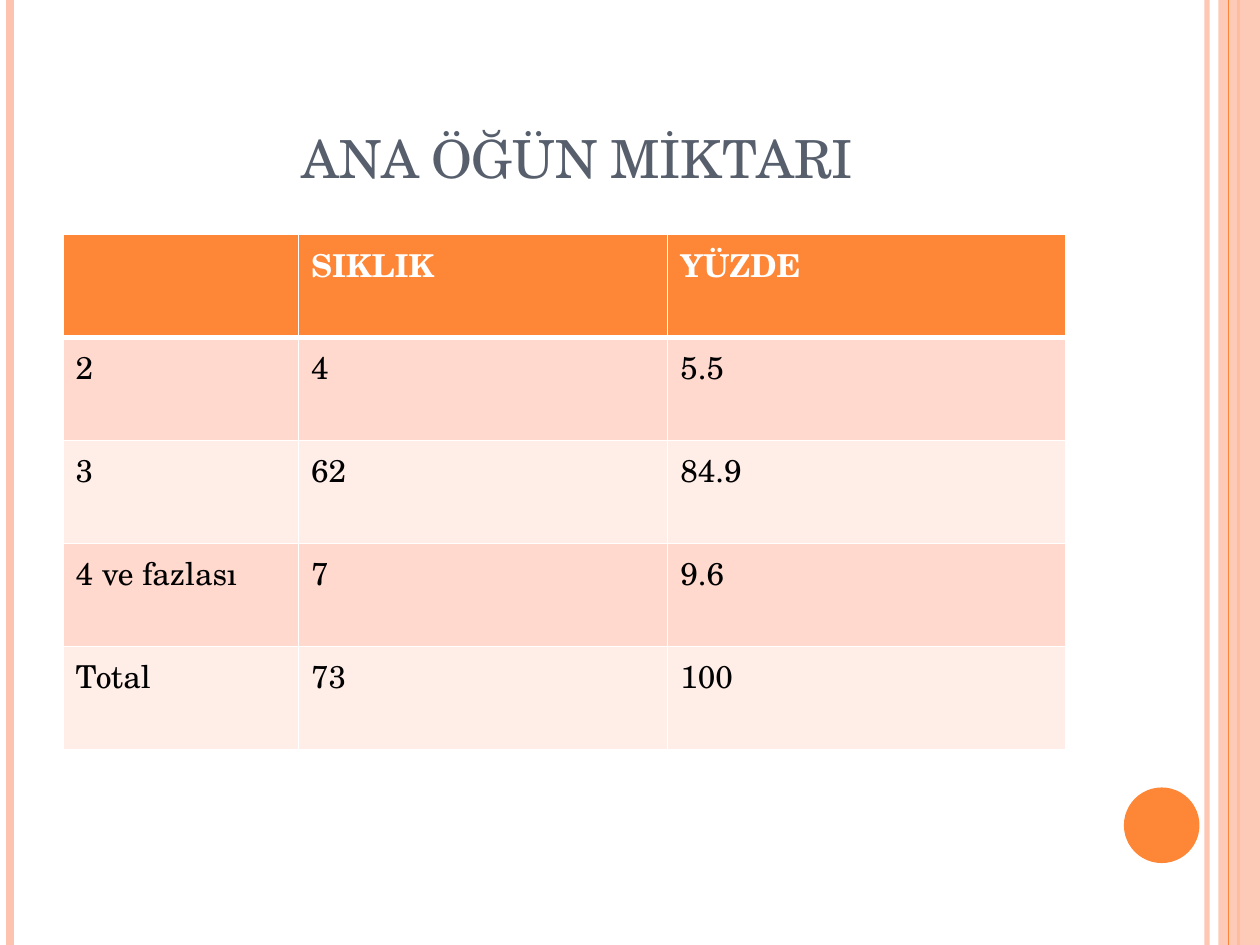
from lxml.etree import SubElement
from pptx import Presentation
from pptx.dml.color import RGBColor
from pptx.enum.shapes import MSO_CONNECTOR, MSO_SHAPE
from pptx.enum.text import MSO_ANCHOR, PP_ALIGN
from pptx.oxml.ns import qn
from pptx.util import Inches, Pt

FONT = "TeX Gyre Schola"
ORANGE = RGBColor(0xFE, 0x86, 0x37)
PEACH = RGBColor(0xFE, 0xC3, 0xAE)
BAND_DARK = RGBColor(0xFF, 0xD9, 0xCE)
BAND_LIGHT = RGBColor(0xFF, 0xED, 0xE8)
SLATE = RGBColor(0x57, 0x5F, 0x6D)
WHITE = RGBColor(0xFF, 0xFF, 0xFF)
BLACK = RGBColor(0x00, 0x00, 0x00)

WIDTH, HEIGHT = Inches(10), Inches(7.5)
MEALS = [
    ["", "SIKLIK", "YÜZDE"],
    ["2", "4", "5.5"],
    ["3", "62", "84.9"],
    ["4 ve fazlası", "7", "9.6"],
    ["Total", "73", "100"],
]
COLUMN_INCHES = [1.87, 2.93, 3.16]


def write_text(frame, text, size, color, bold=False, align=PP_ALIGN.LEFT, small_caps=False):
    paragraph = frame.paragraphs[0]
    paragraph.alignment = align
    run = paragraph.add_run()
    run.text = text
    run.font.name = FONT
    run.font.size = Pt(size)
    run.font.bold = bold
    run.font.color.rgb = color
    if small_caps:
        run.font._element.set("cap", "small")


def set_opacity(properties, percent):
    color = next(properties.iter(qn("a:srgbClr")))
    SubElement(color, qn("a:alpha"), val=str(percent * 1000))


def add_stripe(slide, x, top, height, color, weight, opacity=100):
    stripe = slide.shapes.add_connector(MSO_CONNECTOR.STRAIGHT, x, top, x, top + height)
    stripe.line.color.rgb = color
    stripe.line.width = Pt(weight)
    properties = stripe._element.spPr
    if opacity < 100:
        set_opacity(properties, opacity)
    SubElement(properties, qn("a:effectLst"))


def add_solid(slide, preset, box, color, opacity=100):
    solid = slide.shapes.add_shape(preset, *box)
    solid.shadow.inherit = False
    solid.fill.solid()
    solid.fill.fore_color.rgb = color
    solid.line.fill.background()
    if opacity < 100:
        set_opacity(solid._element.spPr, opacity)


def add_frame(slide, box):
    left, top, width, height = box
    add_stripe(slide, left + int(width * 0.958), top, height, PEACH, 3, opacity=93)
    add_stripe(slide, left + int(width * 0.008), top, height, PEACH, 4.5)
    add_stripe(slide, left + int(width * 0.983), top, height, ORANGE, 1.5)
    side_band = (left + int(width * 0.967), top, int(width * 0.033), height)
    add_solid(slide, MSO_SHAPE.RECTANGLE, side_band, PEACH, opacity=87)
    add_stripe(slide, left + int(width * 0.975), top, height, ORANGE, 0.75)
    diameter = int(width * 0.06)
    disc = (left + int(width * 0.892), top + int(height * 5 / 6), diameter, diameter)
    add_solid(slide, MSO_SHAPE.OVAL, disc, ORANGE)


def add_title(slide, box, text):
    title = slide.shapes.title
    title.left, title.top, title.width, title.height = box
    title.text_frame.vertical_anchor = MSO_ANCHOR.BOTTOM
    write_text(title.text_frame, text, 30, SLATE, align=PP_ALIGN.CENTER, small_caps=True)


def set_borders(cell, top=1, bottom=1):
    properties = cell._tc.get_or_add_tcPr()
    for side, weight in (("L", 1), ("R", 1), ("T", top), ("B", bottom)):
        line = SubElement(properties, qn(f"a:ln{side}"), w=str(Pt(weight)))
        fill = SubElement(line, qn("a:solidFill"))
        SubElement(fill, qn("a:srgbClr"), val=str(WHITE))


def add_meal_table(slide, box, rows):
    table = slide.shapes.add_table(len(rows), len(rows[0]), *box).table
    for column, inches in zip(table.columns, COLUMN_INCHES):
        column.width = Inches(inches)
    for r, values in enumerate(rows):
        header = r == 0
        fill = ORANGE if header else BAND_DARK if r % 2 else BAND_LIGHT
        for c, value in enumerate(values):
            cell = table.cell(r, c)
            set_borders(cell, top=3 if r == 1 else 1, bottom=3 if header else 1)
            cell.fill.solid()
            cell.fill.fore_color.rgb = fill
            if value:
                write_text(cell.text_frame, value, 18, WHITE if header else BLACK, bold=header)


def main():
    deck = Presentation()
    deck.slide_width, deck.slide_height = WIDTH, HEIGHT
    slide = deck.slides.add_slide(deck.slide_layouts[5])
    margin = int(WIDTH * 0.05)
    add_frame(slide, (0, 0, WIDTH, HEIGHT))
    add_title(
        slide,
        (margin, int(HEIGHT * 0.04), int(WIDTH * 0.817), int(HEIGHT / 6)),
        "ANA ÖĞÜN MİKTARI",
    )
    add_meal_table(
        slide,
        (margin, int(HEIGHT * 0.248), Inches(sum(COLUMN_INCHES)), int(HEIGHT * 0.545)),
        MEALS,
    )
    deck.save("out.pptx")


if __name__ == "__main__":
    main()
